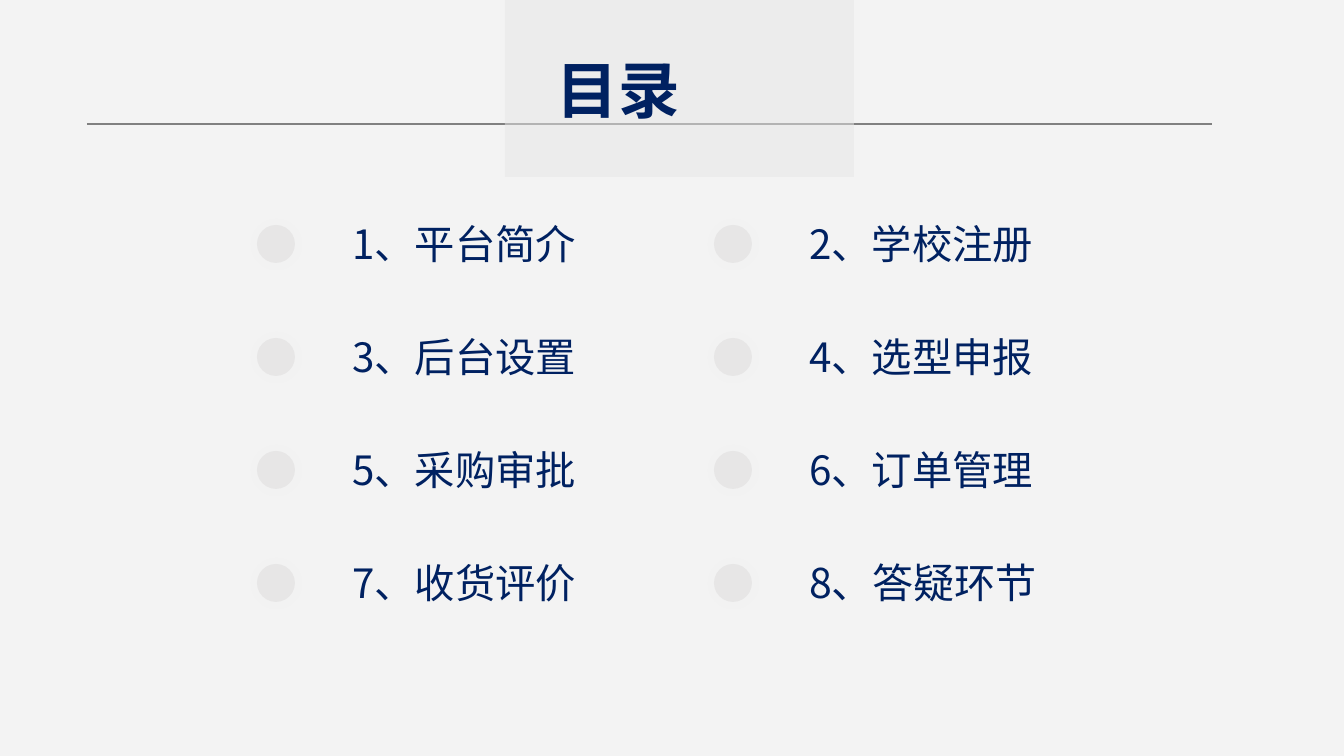
"""Builds the contents slide of a school purchasing platform guide."""
from lxml.etree import SubElement
from pptx import Presentation
from pptx.dml.color import RGBColor
from pptx.enum.shapes import MSO_CONNECTOR as CONNECTOR, MSO_SHAPE as SHAPE
from pptx.enum.text import MSO_ANCHOR as ANCHOR, PP_ALIGN as ALIGN
from pptx.oxml.ns import qn
from pptx.util import Pt

PX = 914400 / 134.4
FONT = "Noto Sans CJK JP"
COLORS = {"background": "F3F3F3", "navy": "002161", "panel": "E7E6E6",
          "halo": "F2F2F2", "rule": "808080"}
TOPICS = ["1、平台简介", "2、学校注册", "3、后台设置", "4、选型申报",
          "5、采购审批", "6、订单管理", "7、收货评价", "8、答疑环节"]
COLUMN_STEP, ROW_STEP = 457, 113


def add_plain_shape(kind, box, color, opacity=100):
    shape = slide.shapes.add_shape(kind, *[round(v * PX) for v in box])
    shape.shadow.inherit = False
    shape.line.fill.background()
    shape.fill.solid()
    shape.fill.fore_color.rgb = RGBColor.from_string(COLORS[color])
    if opacity < 100:
        tint = shape.fill._xPr.find(qn("a:solidFill"))[0]
        SubElement(tint, qn("a:alpha"), val=str(opacity * 1000))


def write_text(holder, text, size, bold=False, align=ALIGN.LEFT):
    frame = holder.text_frame
    frame.word_wrap = True
    frame.vertical_anchor = ANCHOR.MIDDLE
    frame.text = text
    paragraph = frame.paragraphs[0]
    paragraph.alignment = align
    run = paragraph.runs[0]
    run.font.name = FONT
    run.font.size = Pt(size)
    run.font.bold = bold
    run.font.color.rgb = RGBColor.from_string(COLORS["navy"])
    SubElement(run.font._element, qn("a:ea"), typeface=FONT)


prs = Presentation()
prs.slide_width, prs.slide_height = round(1344 * PX), round(756 * PX)
slide = prs.slides.add_slide(prs.slide_layouts[5])
slide.background.fill.solid()
slide.background.fill.fore_color.rgb = RGBColor.from_string(COLORS["background"])

rule = slide.shapes.add_connector(
    CONNECTOR.STRAIGHT, *[round(v * PX) for v in (87, 124, 1212, 124)])
rule.line.color.rgb = RGBColor.from_string(COLORS["rule"])
rule.line.width = Pt(0.75)
SubElement(rule._element.spPr, qn("a:effectLst"))

add_plain_shape(SHAPE.RECTANGLE, (505, 0, 349, 177), "panel", 50)

title = slide.shapes.title
title.left, title.top, title.width, title.height = [
    round(v * PX) for v in (543, 34, 271, 109)]
write_text(title, "目录", 33, bold=True, align=ALIGN.JUSTIFY)
slide.shapes._spTree.append(title._element)

for index, topic in enumerate(TOPICS):
    row, column = divmod(index, 2)
    x, y = column * COLUMN_STEP, row * ROW_STEP
    label = slide.shapes.add_textbox(
        *[round(v * PX) for v in (339 + x, 208 + y, 255, 71)])
    write_text(label, topic, 22 if index == len(TOPICS) - 1 else 21.6)
    add_plain_shape(SHAPE.OVAL, (251 + x, 219 + y, 51, 51), "halo", 40)
    add_plain_shape(SHAPE.OVAL, (257 + x, 225 + y, 38, 38), "panel")

prs.save("out.pptx")
